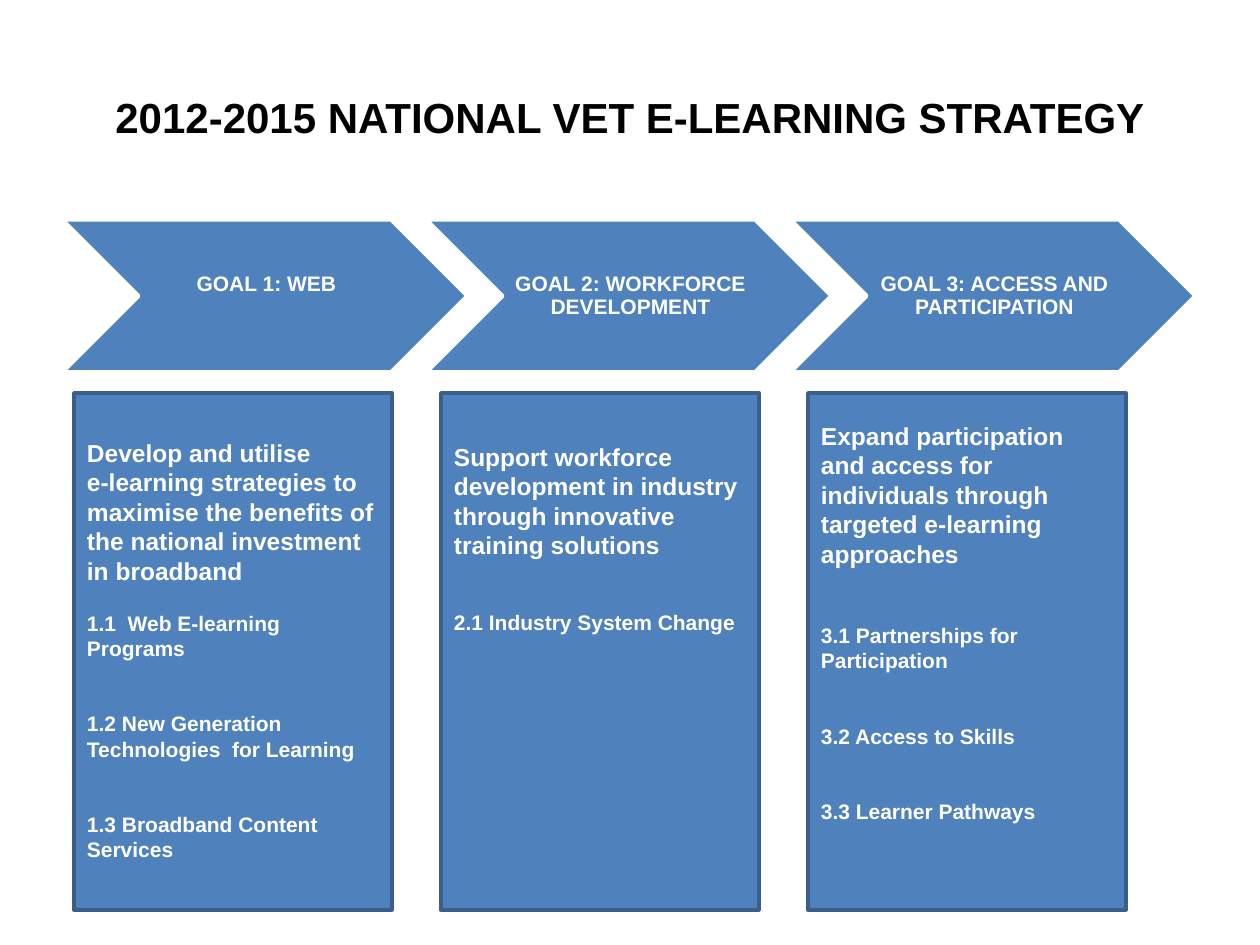
from dataclasses import dataclass

from pptx import Presentation
from pptx.dml.color import RGBColor
from pptx.enum.shapes import MSO_SHAPE
from pptx.enum.text import MSO_ANCHOR, PP_ALIGN
from pptx.util import Pt

TITLE = "2012-2015 NATIONAL VET E-LEARNING STRATEGY"
# head: goal name; foot: px below the name; top: px above the aim;
# gap: points between the aim and its first item
GOALS = [
    dict(head="GOAL 1: WEB", foot=26, top=45, gap=14.4,
         aim="Develop and utilise\ve-learning strategies to maximise the "
             "benefits of the national investment in broadband",
         items=["1.1  Web E-learning Programs",
                "1.2 New Generation Technologies  for Learning",
                "1.3 Broadband Content Services"]),
    dict(head="GOAL 2: WORKFORCE DEVELOPMENT", foot=3, top=49, gap=28.8,
         aim="Support workforce development in industry through innovative "
             "training solutions",
         items=["2.1 Industry System Change"]),
    dict(head="GOAL 3: ACCESS AND PARTICIPATION", foot=3, top=28, gap=31.2,
         aim="Expand participation and access for individuals through "
             "targeted e-learning approaches",
         items=["3.1 Partnerships for Participation",
                "3.2 Access to Skills",
                "3.3 Learner Pathways"]),
]


@dataclass(frozen=True)
class Theme:
    font: str = "Arial"
    blue: str = "4F81BD"
    edge: str = "3A5F8C"
    white: str = "FFFFFF"
    black: str = "000000"
    title: int = 24
    aim: int = 14
    item: int = 12
    gap: float = 28.8
    line: int = 2


THEME = Theme()
SCALE = 9144000 / 1260
ARROW = dict(left=63, top=220, step=364, size=(404, 152))
PANEL = dict(left=74, top=393, step=367, size=(318, 517))


def px(n):
    return round(n * SCALE)


def color(code):
    return RGBColor.from_string(code)


def write(frame, text, size, tint=THEME.white, align=PP_ALIGN.LEFT,
          lead=None, before=0, first=True):
    para = frame.paragraphs[0] if first else frame.add_paragraph()
    para.text = text
    para.alignment = align
    para.space_before = Pt(before)
    if lead:
        para.line_spacing = Pt(lead)
    for run in para.runs:
        font = run.font
        font.name, font.size, font.bold = THEME.font, Pt(size), True
        font.color.rgb = color(tint)


def block(slide, kind, place, col, edge, anchor, pads):
    """Add one filled shape of a row and return its text frame."""
    left = place["left"] + col * place["step"]
    shape = slide.shapes.add_shape(
        kind, px(left), px(place["top"]), *map(px, place["size"]))
    shape.shadow.inherit = False
    shape.fill.solid()
    shape.fill.fore_color.rgb = color(THEME.blue)
    shape.line.color.rgb = color(edge)
    shape.line.width = Pt(THEME.line)
    frame = shape.text_frame
    frame.word_wrap = True
    frame.vertical_anchor = anchor
    (frame.margin_left, frame.margin_top,
     frame.margin_right, frame.margin_bottom) = map(px, pads)
    return frame


def main():
    deck = Presentation()
    deck.slide_width, deck.slide_height = px(1260), px(945)
    slide = deck.slides.add_slide(deck.slide_layouts[5])

    title = slide.shapes.title
    title.left, title.top = px(63), px(38)
    title.width, title.height = px(1134), px(158)
    title.text_frame.vertical_anchor = MSO_ANCHOR.MIDDLE
    write(title.text_frame, TITLE, THEME.title, tint=THEME.black,
          align=PP_ALIGN.CENTER)

    for col, goal in enumerate(GOALS):
        frame = block(slide, MSO_SHAPE.CHEVRON, ARROW, col, THEME.white,
                      MSO_ANCHOR.MIDDLE, (6, 3, 3, goal["foot"]))
        write(frame, goal["head"], THEME.item, align=PP_ALIGN.CENTER, lead=13)

    for col, goal in enumerate(GOALS):
        frame = block(slide, MSO_SHAPE.RECTANGLE, PANEL, col, THEME.edge,
                      MSO_ANCHOR.TOP, (13, goal["top"], 13, 6))
        write(frame, goal["aim"], THEME.aim, lead=16.8)
        for row, item in enumerate(goal["items"]):
            write(frame, item, THEME.item, lead=14.4, first=False,
                  before=THEME.gap if row else goal["gap"])

    deck.save("out.pptx")


if __name__ == "__main__":
    main()
